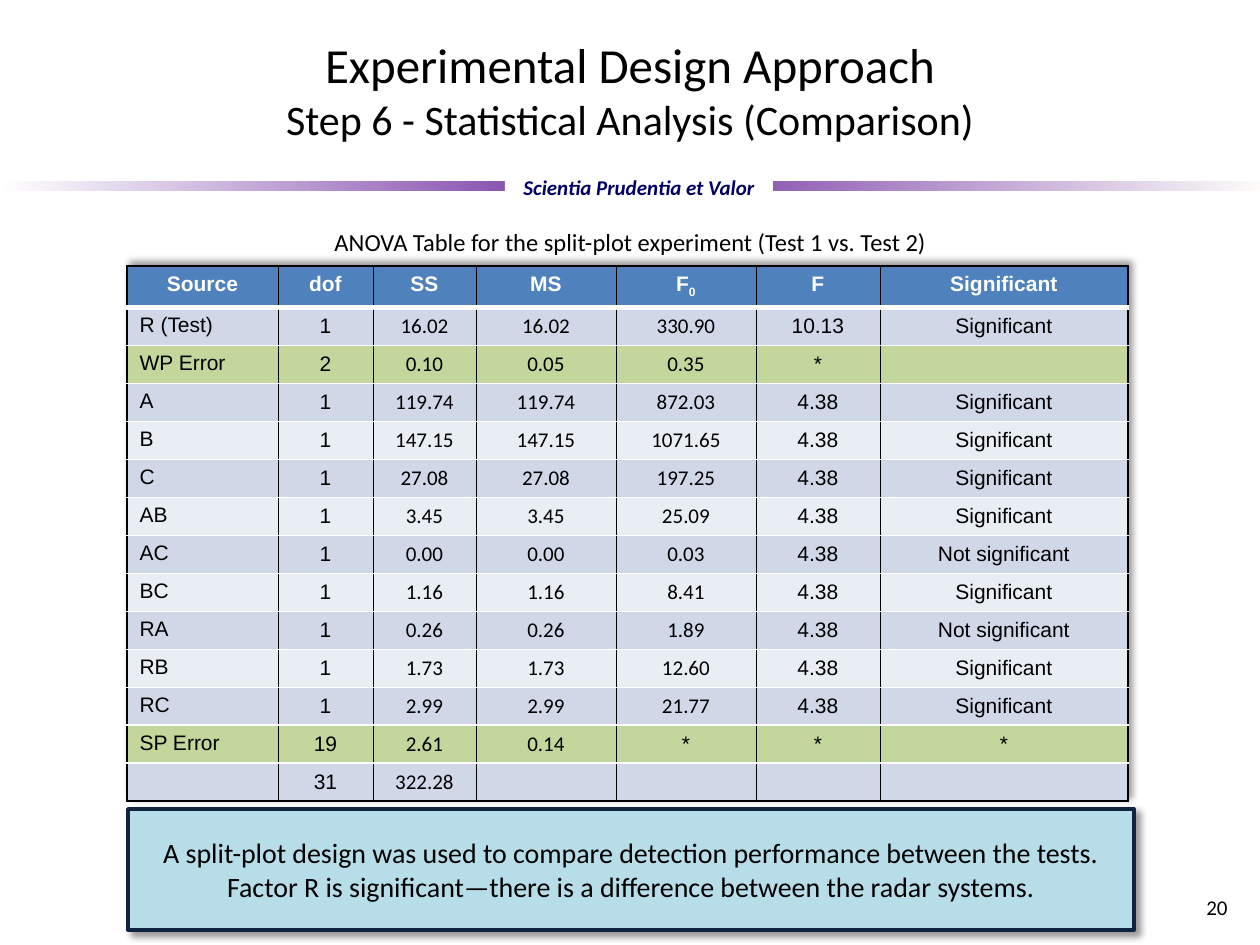
from dataclasses import dataclass

from pptx import Presentation
from pptx.dml.color import RGBColor
from pptx.enum.shapes import MSO_SHAPE
from pptx.enum.text import MSO_ANCHOR, MSO_AUTO_SIZE, PP_ALIGN
from pptx.oxml import parse_xml
from pptx.oxml.ns import nsdecls, qn
from pptx.util import Emu, Pt

RECTANGLE = MSO_SHAPE.RECTANGLE
LEFT, CENTER, RIGHT = PP_ALIGN.LEFT, PP_ALIGN.CENTER, PP_ALIGN.RIGHT
TOP, MIDDLE = MSO_ANCHOR.TOP, MSO_ANCHOR.MIDDLE
NO_AUTOFIT = MSO_AUTO_SIZE.NONE
PX = 914400 / 126
TITLE_ONLY = 5


@dataclass(frozen=True)
class Theme:
    body_font: str = "Calibri"
    table_font: str = "Arial"
    black: str = "000000"
    white: str = "FFFFFF"
    purple: str = "7030A0"
    fade: str = "FCFBF9"
    navy: str = "000066"
    header: str = "4F81BD"
    band_dark: str = "D0D8E8"
    band_light: str = "E9EDF4"
    error_row: str = "C3D69B"
    callout: str = "B7DEE8"
    callout_line: str = "0F243E"
    title_size: int = 28
    subtitle_size: int = 24
    callout_size: int = 16
    caption_size: int = 14
    small_size: int = 12


THEME = Theme()
COLUMN_WIDTHS = [151, 95, 103, 140, 140, 124, 248]
HEADER_HEIGHT, ROW_HEIGHT = 40, 38
NUMBER_COLUMNS = (2, 3, 4)
YES, NO = "Significant", "Not significant"
ANOVA = [
    ["Source", "dof", "SS", "MS", "F0", "F", "Significant"],
    ["R (Test)", "1", "16.02", "16.02", "330.90", "10.13", YES],
    ["WP Error", "2", "0.10", "0.05", "0.35", "*", ""],
    ["A", "1", "119.74", "119.74", "872.03", "4.38", YES],
    ["B", "1", "147.15", "147.15", "1071.65", "4.38", YES],
    ["C", "1", "27.08", "27.08", "197.25", "4.38", YES],
    ["AB", "1", "3.45", "3.45", "25.09", "4.38", YES],
    ["AC", "1", "0.00", "0.00", "0.03", "4.38", NO],
    ["BC", "1", "1.16", "1.16", "8.41", "4.38", YES],
    ["RA", "1", "0.26", "0.26", "1.89", "4.38", NO],
    ["RB", "1", "1.73", "1.73", "12.60", "4.38", YES],
    ["RC", "1", "2.99", "2.99", "21.77", "4.38", YES],
    ["SP Error", "19", "2.61", "0.14", "*", "*", "*"],
    ["", "31", "322.28", "", "", "", ""],
]


def px(*lengths):
    return [Emu(round(length * PX)) for length in lengths]


def shadow_xml(degrees):
    return parse_xml(
        f'<a:effectLst {nsdecls("a")}><a:outerShdw blurRad="50800" dist="38100" '
        f'dir="{degrees * 60000}" algn="tl" rotWithShape="0"><a:srgbClr val="{THEME.black}">'
        '<a:alpha val="40000"/></a:srgbClr></a:outerShdw></a:effectLst>')


class SlideBuilder:
    def __init__(self, page, theme):
        self.page = page
        self.theme = theme

    def style(self, span, size, color=None, font=None, bold=False, italic=False):
        span.font.size = Pt(size)
        span.font.name = font or self.theme.body_font
        span.font.color.rgb = RGBColor.from_string(color or self.theme.black)
        span.font.bold, span.font.italic = bold, italic

    def fill_frame(self, frame, text, size, align=CENTER, anchor=TOP, **look):
        frame.text = text
        frame.vertical_anchor = anchor
        para = frame.paragraphs[0]
        para.alignment = align
        for span in para.runs:
            self.style(span, size, **look)

    def title(self, box_px, lines):
        box = self.page.shapes.title
        box.left, box.top, box.width, box.height = px(*box_px)
        frame = box.text_frame
        frame.auto_size, frame.vertical_anchor = NO_AUTOFIT, MIDDLE
        para = frame.paragraphs[0]
        para.alignment = CENTER
        for index, (text, size) in enumerate(lines):
            if index:
                para.add_line_break()
            span = para.add_run()
            span.text = text
            self.style(span, size)

    def text(self, box_px, text, size, wrap=True, **look):
        box = self.page.shapes.add_textbox(*px(*box_px))
        box.text_frame.word_wrap = wrap
        self.fill_frame(box.text_frame, text, size, **look)

    def rectangle(self, box_px, fill=None, line=None):
        box = self.page.shapes.add_shape(RECTANGLE, *px(*box_px))
        box.shadow.inherit = False
        if fill:
            box.fill.solid()
            box.fill.fore_color.rgb = RGBColor.from_string(fill)
        if line:
            box.line.color.rgb = RGBColor.from_string(line)
            box.line.width = Pt(2)
        else:
            box.line.fill.background()
        return box

    def gradient_bar(self, box_px, stops):
        properties = self.rectangle(box_px)._element.spPr
        marks = "".join(f'<a:gs pos="{percent * 1000}"><a:srgbClr val="{color}"/></a:gs>'
                        for percent, color in stops)
        properties.find(qn("a:prstGeom")).addnext(parse_xml(
            f'<a:gradFill {nsdecls("a")}><a:gsLst>{marks}</a:gsLst><a:lin ang="0"/></a:gradFill>'))

    def callout(self, box_px, text):
        box = self.rectangle(box_px, self.theme.callout, self.theme.callout_line)
        properties = box._element.spPr
        properties.replace(properties.find(qn("a:effectLst")), shadow_xml(45))
        box.text_frame.word_wrap = True
        self.fill_frame(box.text_frame, text, self.theme.callout_size, anchor=MIDDLE)

    def borders(self, cell, row, column, last_row, last_column):
        black, white = self.theme.black, self.theme.white
        edges = {
            "L": (black, 1 if column == 0 else 0.25),
            "R": (black, 1 if column == last_column else 0.25),
            "T": (black, 1) if row == 0 else (white, 3 if row == 1 else 1),
            "B": (black, 1) if row == last_row else (white, 3 if row == 0 else 1),
        }
        properties = cell._tc.get_or_add_tcPr()
        for index, (side, (color, width)) in enumerate(edges.items()):
            properties.insert(index, parse_xml(
                f'<a:ln{side} {nsdecls("a")} w="{int(Pt(width))}"><a:solidFill>'
                f'<a:srgbClr val="{color}"/></a:solidFill></a:ln{side}>'))

    def cell(self, cell, text, row, column):
        theme = self.theme
        banding = theme.band_dark if row % 2 else theme.band_light
        is_number = row > 0 and column in NUMBER_COLUMNS and text != "*"
        look = {"font": theme.body_font if is_number else theme.table_font}
        align, anchor, fill = CENTER, MIDDLE, banding
        if row == 0:
            anchor, fill = TOP, theme.header
            look.update(color=theme.white, bold=True)
        elif column == 0:
            align, anchor = LEFT, TOP
        if "Error" in ANOVA[row][0]:
            fill = theme.error_row
        cell.fill.solid()
        cell.fill.fore_color.rgb = RGBColor.from_string(fill)
        if is_number and text:
            cell.margin_left = cell.margin_right = cell.margin_top = cell.margin_bottom = 0
        self.fill_frame(cell.text_frame, text, theme.small_size, align, **look)
        cell.vertical_anchor = anchor
        para = cell.text_frame.paragraphs[0]
        if not text:
            para._p.append(parse_xml(
                f'<a:endParaRPr {nsdecls("a")} sz="{theme.small_size * 100}"/>'))
        if text == "F0":
            para.runs[0].text = "F"
            subscript = para.add_run()
            subscript.text = "0"
            self.style(subscript, theme.small_size, **look)
            subscript.font._element.set("baseline", "-25000")

    def table(self, left, top, rows, widths):
        height = HEADER_HEIGHT + ROW_HEIGHT * (len(rows) - 1)
        table = self.page.shapes.add_table(
            len(rows), len(widths), *px(left, top, sum(widths), height)).table
        table.horz_banding = False
        table._tbl.tblPr.insert(0, shadow_xml(315))
        for column, width in zip(table.columns, px(*widths)):
            column.width = width
        for row, values in enumerate(rows):
            table.rows[row].height = px(ROW_HEIGHT if row else HEADER_HEIGHT)[0]
            for column, text in enumerate(values):
                cell = table.cell(row, column)
                self.cell(cell, text, row, column)
                self.borders(cell, row, column, len(rows) - 1, len(widths) - 1)


def main():
    deck = Presentation()
    deck.slide_width, deck.slide_height = px(1260, 945)
    page = deck.slides.add_slide(deck.slide_layouts[TITLE_ONLY])
    slide = SlideBuilder(page, THEME)
    # Motto band
    slide.gradient_bar((0, 181, 1260, 10),
                       [(0, THEME.white), (49, THEME.purple), (100, THEME.fade)])
    slide.rectangle((505, 168, 268, 37), THEME.white)
    slide.text((505, 168, 268, 37), "Scientia Prudentia et Valor", THEME.small_size,
               wrap=False, color=THEME.navy, bold=True, italic=True)
    # Title
    slide.title((168, 10, 924, 158), [
        ("Experimental Design Approach", THEME.title_size),
        ("Step 6 - Statistical Analysis (Comparison)", THEME.subtitle_size)])
    # Analysis table
    slide.text((128, 221, 1005, 43),
               "ANOVA Table for the split-plot experiment (Test 1 vs. Test 2)", THEME.caption_size)
    slide.table(127, 266, ANOVA, COLUMN_WIDTHS)
    # Conclusion and page number
    slide.callout((128, 809, 1006, 121),
                  "A split-plot design was used to compare detection performance between the tests. "
                  "Factor R is significant—there is a difference between the radar systems.")
    slide.text((1187, 882, 53, 50), "20", THEME.small_size, align=RIGHT, anchor=MIDDLE)
    deck.save("out.pptx")


if __name__ == "__main__":
    main()
